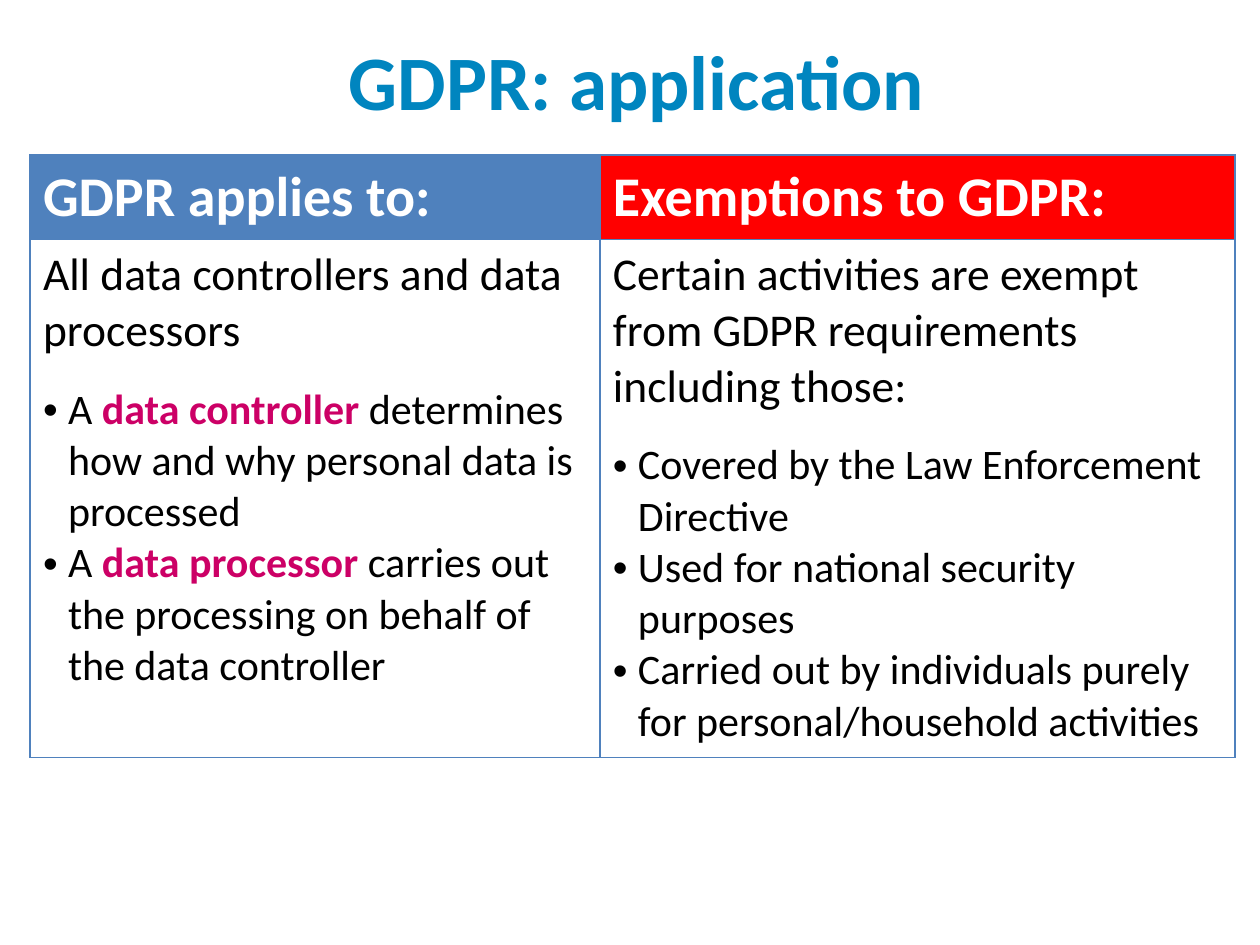
import pptx
import pptx.dml.color
import pptx.enum.text
import pptx.oxml.ns
import pptx.util
from lxml import etree

PX = 914400 // 126
FONT = "Calibri"
BLUE, RED, WHITE, BLACK = "4F81BD", "FF0000", "FFFFFF", "000000"
TITLE_BLUE, PINK = "0085BF", "CC0066"

TITLE = "GDPR: application"
# Each bullet is a list of (text, is key term) spans.
COLUMNS = [
    {
        "heading": "GDPR applies to:", "fill": BLUE, "width": 570,
        "intro": "All data controllers and data processors",
        "bullets": [
            [("A ", False), ("data controller ", True),
             ("determines how and why personal data is processed", False)],
            [("A ", False), ("data processor ", True),
             ("carries out the processing on behalf of the data controller", False)],
        ],
    },
    {
        "heading": "Exemptions to GDPR:", "fill": RED, "width": 635,
        "intro": "Certain activities are exempt from GDPR requirements including those:",
        "bullets": [
            [("Covered by the Law Enforcement Directive", False)],
            [("Used for national security purposes", False)],
            [("Carried out by individuals purely for personal/household activities", False)],
        ],
    },
]
TABLE_LEFT, TABLE_TOP = 30, 155
ROW_HEIGHTS = [84, 518]
INSET_X, INSET_Y, BULLET_INDENT = 13, 8, 25


def px(length):
    return pptx.util.Emu(length * PX)


def rgb(color):
    return pptx.dml.color.RGBColor.from_string(color)


def set_font(font, size, color, bold=False):
    font.name, font.size, font.bold = FONT, pptx.util.Pt(size), bold
    font.color.rgb = rgb(color)


def add_child(parent, tag, **attributes):
    return etree.SubElement(parent, pptx.oxml.ns.qn(tag), attributes)


def style_cell(cell, fill):
    cell.margin_left = cell.margin_right = px(INSET_X)
    cell.margin_top = cell.margin_bottom = px(INSET_Y)
    properties = cell._tc.get_or_add_tcPr()
    for side in ("L", "R", "T", "B"):
        line = add_child(properties, f"a:ln{side}", w=str(pptx.util.Pt(1)))
        add_child(add_child(line, "a:solidFill"), "a:srgbClr", val=BLUE)
    cell.fill.solid()
    cell.fill.fore_color.rgb = rgb(fill)


def add_bullet(frame, spans, space_before):
    para = frame.add_paragraph()
    properties = para._p.get_or_add_pPr()
    properties.set("marL", str(px(BULLET_INDENT)))
    properties.set("indent", str(px(-BULLET_INDENT)))
    add_child(properties, "a:buFont", typeface="Arial")
    add_child(properties, "a:buChar", char="•")
    para.space_before = pptx.util.Pt(space_before)
    for text, is_term in spans:
        span = para.add_run()
        span.text = text
        set_font(span.font, 24, PINK if is_term else BLACK, is_term)


def add_title(page):
    title = page.shapes.title
    title.left, title.top, title.width, title.height = px(7), px(27), px(1260), px(106)
    frame = title.text_frame
    frame.text = TITLE
    frame.vertical_anchor = pptx.enum.text.MSO_ANCHOR.MIDDLE
    para = frame.paragraphs[0]
    para.alignment = pptx.enum.text.PP_ALIGN.CENTER
    set_font(para.font, 44, TITLE_BLUE, True)


def add_comparison(page):
    width = sum(column["width"] for column in COLUMNS)
    table = page.shapes.add_table(
        len(ROW_HEIGHTS), len(COLUMNS), px(TABLE_LEFT), px(TABLE_TOP),
        px(width), px(sum(ROW_HEIGHTS))).table
    table.horz_banding = False
    for row, height in zip(table.rows, ROW_HEIGHTS):
        row.height = px(height)
    for index, column in enumerate(COLUMNS):
        table.columns[index].width = px(column["width"])
        heading, body = table.cell(0, index), table.cell(1, index)
        style_cell(heading, column["fill"])
        style_cell(body, WHITE)
        heading.text = column["heading"]
        set_font(heading.text_frame.paragraphs[0].font, 32, WHITE, True)
        body.text = column["intro"]
        set_font(body.text_frame.paragraphs[0].font, 26, BLACK)
        for number, spans in enumerate(column["bullets"]):
            add_bullet(body.text_frame, spans, 0 if number else 14.6)


def main():
    deck = pptx.Presentation()
    deck.slide_width, deck.slide_height = px(1260), px(945)
    page = deck.slides.add_slide(deck.slide_layouts[5])
    add_title(page)
    add_comparison(page)
    deck.save("out.pptx")


if __name__ == "__main__":
    main()
